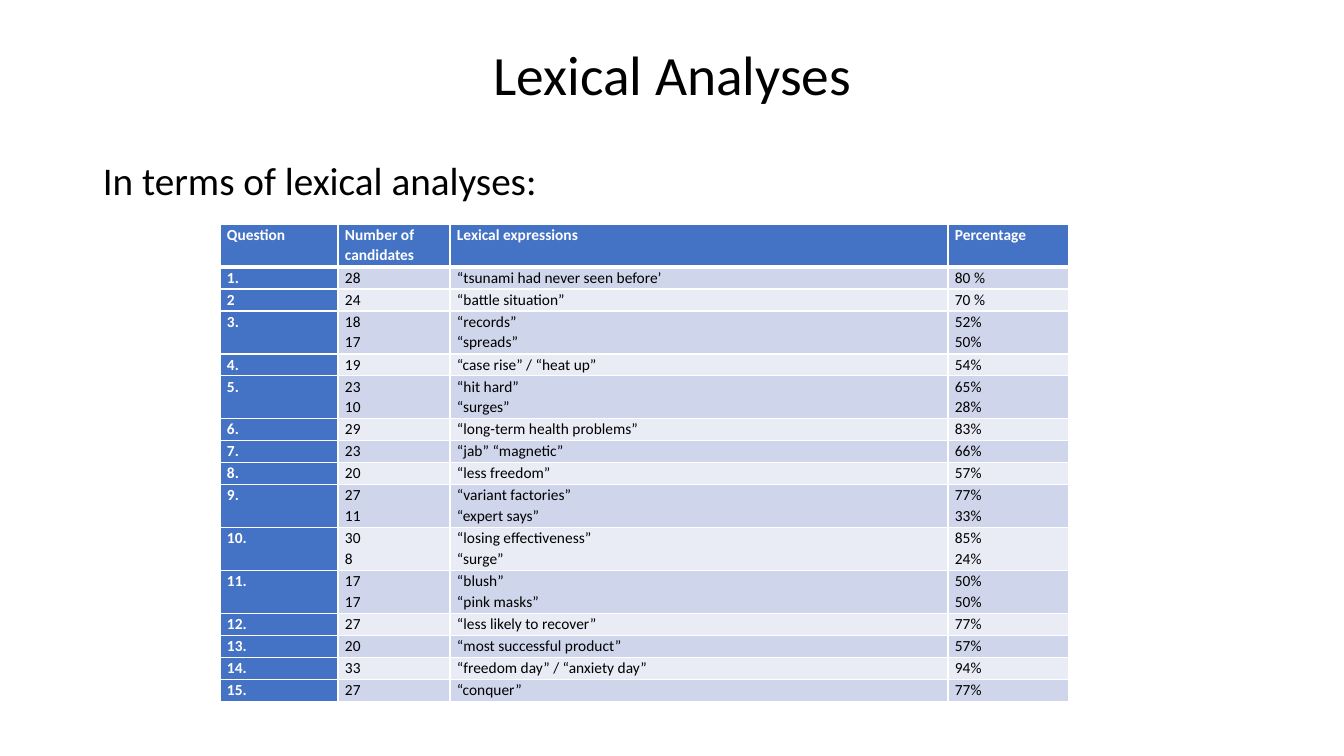
from dataclasses import dataclass

from lxml import etree
from pptx import Presentation
from pptx.dml.color import RGBColor
from pptx.enum.text import MSO_ANCHOR, MSO_AUTO_SIZE, PP_ALIGN
from pptx.oxml.ns import qn
from pptx.util import Emu, Pt

CENTER, LEFT = PP_ALIGN.CENTER, PP_ALIGN.LEFT
MIDDLE, TOP = MSO_ANCHOR.MIDDLE, MSO_ANCHOR.TOP
NO_AUTOFIT = MSO_AUTO_SIZE.NONE
TITLE_ONLY = 5
EMU_PER_PX = 914400 / 100.8


@dataclass(frozen=True)
class Theme:
    font: str = "Calibri"
    text: str = "000000"
    white: str = "FFFFFF"
    accent: str = "4472C4"
    bands: tuple = ("CFD5EA", "E9EBF5")
    title_size: float = 39.6
    body_size: float = 28
    table_size: float = 11
    border: float = 1
    header_border: float = 3


COLUMN_WIDTHS = (118, 112, 498, 121)
SINGLE_ROW, DOUBLE_ROW = 22, 43
HEADER = ("Question", "Number of candidates", "Lexical expressions", "Percentage")
ANSWERS = (
    ("1.", "28", "“tsunami had never seen before’", "80 %"),
    ("2", "24", "“battle situation”", "70 %"),
    ("3.", "18\n17", "“records”\n“spreads”", "52%\n50%"),
    ("4.", "19", "“case rise” / “heat up”", "54%"),
    ("5.", "23\n10", "“hit hard”\n“surges”", "65%\n28%"),
    ("6.", "29", "“long-term health problems”", "83%"),
    ("7.", "23", "“jab” “magnetic”", "66%"),
    ("8.", "20", "“less freedom”", "57%"),
    ("9.", "27\n11", "“variant factories”\n“expert says”", "77%\n33%"),
    ("10.", "30\n8", "“losing effectiveness”\n“surge”", "85%\n24%"),
    ("11.", "17\n17", "“blush”\n“pink masks”", "50%\n50%"),
    ("12.", "27", "“less likely to recover”", "77%"),
    ("13.", "20", "“most successful product”", "57%"),
    ("14.", "33", "“freedom day” / “anxiety day”", "94%"),
    ("15.", "27", "“conquer”", "77%"),
)


def px(length):
    return Emu(round(length * EMU_PER_PX))


class SlideBuilder:
    def __init__(self, slide, theme):
        self.slide = slide
        self.theme = theme

    def set_text(self, frame, text, size, color, spacing, bold=False, align=LEFT):
        frame.text = text
        frame.word_wrap = True
        for paragraph in frame.paragraphs:
            paragraph.alignment = align
            paragraph.line_spacing = spacing
            paragraph.space_before = Pt(0)
            font = paragraph.font
            font.name, font.size, font.bold = self.theme.font, Pt(size), bold
            font.color.rgb = RGBColor.from_string(color)

    def title(self, text, left, top, width, height):
        shape = self.slide.shapes.title
        shape.left, shape.top = px(left), px(top)
        shape.width, shape.height = px(width), px(height)
        frame = shape.text_frame
        self.set_text(frame, text, self.theme.title_size, self.theme.text, 0.9, align=CENTER)
        frame.auto_size = NO_AUTOFIT
        frame.vertical_anchor = MIDDLE

    def body(self, text, left, top, width, height):
        shape = self.slide.shapes.add_textbox(px(left), px(top), px(width), px(height))
        frame = shape.text_frame
        self.set_text(frame, text, self.theme.body_size, self.theme.text, 0.9)
        frame.paragraphs[0].space_before = Pt(10)

    def border(self, cell, side, width):
        properties = cell._tc.get_or_add_tcPr()
        line = etree.SubElement(properties, qn(f"a:ln{side}"), w=str(Pt(width)))
        fill = etree.SubElement(line, qn("a:solidFill"))
        etree.SubElement(fill, qn("a:srgbClr"), val=self.theme.white)

    def cell(self, cell, text, row, column):
        theme = self.theme
        heading = row == 0 or column == 0
        cell.margin_left = cell.margin_right = px(7)
        cell.margin_top = cell.margin_bottom = 0
        cell.vertical_anchor = TOP
        color = theme.white if heading else theme.text
        self.set_text(cell.text_frame, text, theme.table_size, color, 1.07, bold=heading)
        # The header row is set off by a thicker rule
        header_edge = {0: "B", 1: "T"}.get(row)
        for side in "LRTB":
            self.border(cell, side, theme.header_border if side == header_edge else theme.border)
        fill = theme.accent if heading else theme.bands[(row - 1) % 2]
        cell.fill.solid()
        cell.fill.fore_color.rgb = RGBColor.from_string(fill)

    def table(self, rows, widths, heights, left, top):
        frame = self.slide.shapes.add_table(
            len(rows), len(widths), px(left), px(top), px(sum(widths)), px(sum(heights)))
        table = frame.table
        table.first_col = True
        for column, width in zip(table.columns, widths):
            column.width = px(width)
        for row, height in zip(table.rows, heights):
            row.height = px(height)
        for row, texts in enumerate(rows):
            for column, text in enumerate(texts):
                self.cell(table.cell(row, column), text, row, column)


def main():
    presentation = Presentation()
    presentation.slide_width, presentation.slide_height = px(1344), px(756)
    slide = presentation.slides.add_slide(presentation.slide_layouts[TITLE_ONLY])
    builder = SlideBuilder(slide, Theme())

    # Title and lead-in
    builder.title("Lexical Analyses", 93, 40, 1159, 75)
    builder.body("In terms of lexical analyses:", 93, 157, 1159, 545)

    # Table of expressions by question
    heights = [DOUBLE_ROW] + [
        DOUBLE_ROW if "\n" in answer[1] else SINGLE_ROW for answer in ANSWERS]
    builder.table((HEADER,) + ANSWERS, COLUMN_WIDTHS, heights, 220, 224)

    presentation.save("out.pptx")


if __name__ == "__main__":
    main()
